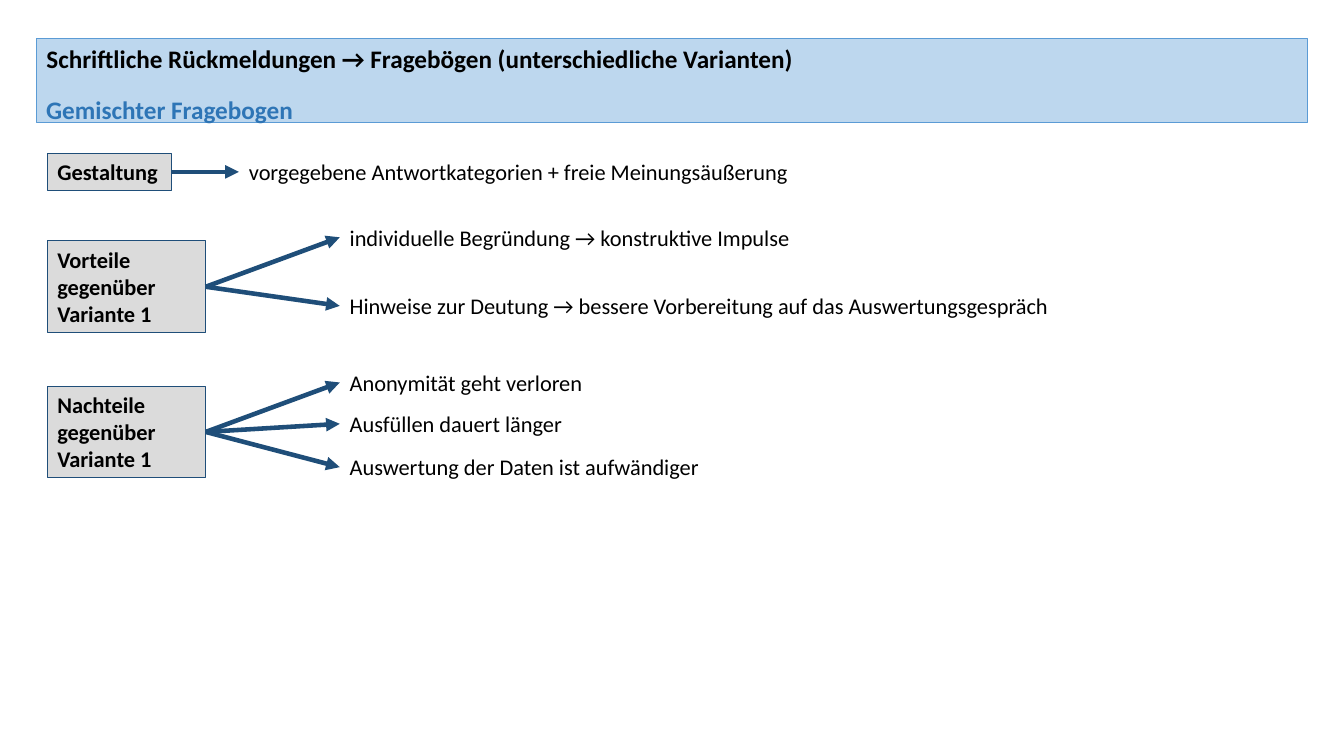
from pptx import Presentation
from pptx.dml.color import RGBColor
from pptx.enum.shapes import MSO_CONNECTOR, MSO_SHAPE
from pptx.enum.text import MSO_ANCHOR, MSO_AUTO_SIZE, PP_ALIGN
from pptx.oxml.ns import qn
from pptx.util import Inches, Pt
from lxml.etree import SubElement

BLACK = RGBColor(0x00, 0x00, 0x00)
GREY = RGBColor(0xDB, 0xDB, 0xDB)
NAVY = RGBColor(0x1F, 0x4E, 0x79)
BLUE = RGBColor(0x2E, 0x75, 0xB6)
SKY = RGBColor(0xBD, 0xD7, 0xEE)
EDGE = RGBColor(0x5B, 0x9B, 0xD5)

deck = Presentation()
deck.slide_width, deck.slide_height = Inches(13.33), Inches(7.5)
slide = deck.slides.add_slide(deck.slide_layouts[5])
shapes = slide.shapes

# Grid of 100 columns and 100 rows
COL, ROW = deck.slide_width / 100, deck.slide_height / 100
MARGIN, LEFT = 2.7, 3.53
LINE, BAR = 4.93, 5.33


def place(x, y, w, h):
    return int(x * COL), int(y * ROW), int(w * COL), int(h * ROW)


def write(shape, text, size=16, bold=False, color=BLACK, fill=None, edge=None):
    frame = shape.text_frame
    frame.text = text
    frame.word_wrap = True
    frame.auto_size = MSO_AUTO_SIZE.SHAPE_TO_FIT_TEXT
    frame.vertical_anchor = MSO_ANCHOR.TOP
    para = frame.paragraphs[0]
    para.alignment = PP_ALIGN.LEFT
    font = para.runs[0].font
    font.name, font.size, font.bold = "Calibri", Pt(size), bold
    font.color.rgb = color
    if fill is not None:
        shape.fill.solid()
        shape.fill.fore_color.rgb = fill
        shape.line.color.rgb = edge
        shape.line.width = Pt(0.75)


# Title bar and subtitle
title = shapes.title
title.left, title.top, title.width, title.height = place(MARGIN, 5.07, 94.6, BAR)
write(title, "Schriftliche Rückmeldungen → Fragebögen (unterschiedliche Varianten)",
      18, True, fill=SKY, edge=EDGE)
head = shapes.add_textbox(*place(MARGIN, 11.87, 83.27, BAR))
write(head, "Gemischter Fragebogen", 18, True, BLUE)

# Each group: label, top, width, height, column of its points, points (text, top, width)
groups = [
    ("Gestaltung", 20.27, 9.23, LINE, 17.78, [
        ("vorgegebene Antwortkategorien + freie Meinungsäußerung", 20.27, 57.16),
    ]),
    ("Vorteile gegenüber Variante 1", 31.87, 11.78, 12.13, 25.28, [
        ("individuelle Begründung → konstruktive Impulse", 28.93, 39.08),
        ("Hinweise zur Deutung → bessere Vorbereitung auf das Auswertungsgespräch",
         38, 60.47),
    ]),
    ("Nachteile gegenüber Variante 1", 51.07, 11.78, 12.13, 25.28, [
        ("Anonymität geht verloren", 48.13, 19.2),
        ("Ausfüllen dauert länger", 53.6, 18.6),
        ("Auswertung der Daten ist aufwändiger", 59.33, 27.68),
    ]),
]

for label, top, width, height, start, points in groups:
    # Label box
    box = shapes.add_shape(MSO_SHAPE.RECTANGLE, *place(LEFT, top, width, height))
    box.shadow.inherit = False
    write(box, label, bold=True, fill=GREY, edge=NAVY)

    for text, y, w in points:
        note = shapes.add_textbox(*place(start, y, w, LINE))
        write(note, text)

        # Arrow from the label to the point
        arrow = shapes.add_connector(MSO_CONNECTOR.STRAIGHT, 0, 0, 0, 0)
        arrow.begin_connect(box, 3)
        arrow.end_connect(note, 1)
        arrow.line.color.rgb = NAVY
        arrow.line.width = Pt(3.25)
        SubElement(arrow.line._get_or_add_ln(), qn("a:tailEnd"), type="triangle")
        SubElement(arrow._element.spPr, qn("a:effectLst"))

deck.save("out.pptx")
